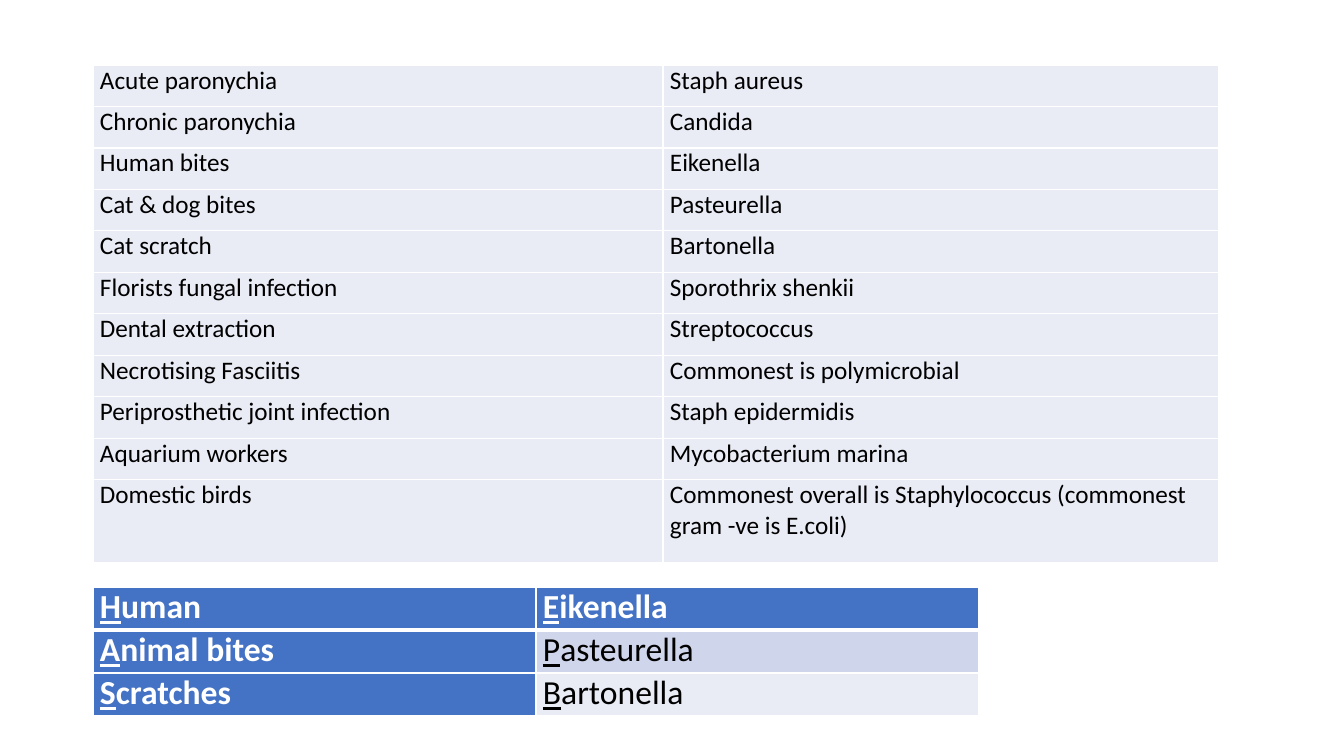
import pptx
import pptx.util
import pptx.dml.color
import pptx.oxml
from pptx.oxml.ns import qn

EMU_PER_PX = 914400 / 100.8
WHITE, BLACK, BLUE = "FFFFFF", "000000", "4472C4"
PALE, MID = "E9EBF5", "CFD5EA"


def color(hex_text):
    return pptx.dml.color.RGBColor.from_string(hex_text)


def px(length):
    return pptx.util.Emu(round(length * EMU_PER_PX))


deck = pptx.Presentation()
deck.slide_width, deck.slide_height = px(1344), px(756)
page = deck.slides.add_slide(deck.slide_layouts[6])

infections = [
    ("Acute paronychia", "Staph aureus"),
    ("Chronic paronychia", "Candida"),
    ("Human bites", "Eikenella"),
    ("Cat & dog bites", "Pasteurella"),
    ("Cat scratch", "Bartonella"),
    ("Florists fungal infection", "Sporothrix shenkii"),
    ("Dental extraction", "Streptococcus"),
    ("Necrotising Fasciitis", "Commonest is polymicrobial"),
    ("Periprosthetic joint infection", "Staph epidermidis"),
    ("Aquarium workers", "Mycobacterium marina"),
    ("Domestic birds", "Commonest overall is Staphylococcus (commonest gram -ve is E.coli)"),
]
mnemonic = [
    ("Human", "Eikenella"),
    ("Animal bites", "Pasteurella"),
    ("Scratches", "Bartonella"),
]

tables = [
    (infections, 65, (570, 556), [px(498) // 12] * 10 + [px(498) // 6], 18, False),
    (mnemonic, 587, (443, 443), [px(43)] * 3, 24, True),
]

for entries, top, widths, heights, size, is_mnemonic in tables:
    frame = page.shapes.add_table(len(entries), 2, px(93), px(top), px(sum(widths)), sum(heights))
    table = frame.table
    table.first_row = is_mnemonic
    table.first_col = is_mnemonic
    table.horz_banding = is_mnemonic
    for column, width in zip(table.columns, widths):
        column.width = px(width)
    for row, height in zip(table.rows, heights):
        row.height = height

    for row_index, entry in enumerate(entries):
        for column_index, words in enumerate(entry):
            cell = table.cell(row_index, column_index)
            cell.margin_left = cell.margin_right = px(7)
            cell.margin_top = cell.margin_bottom = 0
            is_heading = is_mnemonic and (row_index == 0 or column_index == 0)
            is_banded = is_mnemonic and row_index == 1

            para = cell.text_frame.paragraphs[0]
            pieces = [words[:1], words[1:]] if is_mnemonic else [words]
            for piece_index, piece in enumerate(pieces):
                span = para.add_run()
                span.text = piece
                span.font.name = "Calibri"
                span.font.size = pptx.util.Pt(size)
                span.font.bold = is_heading
                span.font.underline = is_mnemonic and piece_index == 0
                span.font.color.rgb = color(WHITE if is_heading else BLACK)

            properties = cell._tc.get_or_add_tcPr()
            for side in ("lnL", "lnR", "lnT", "lnB"):
                below_header = is_mnemonic and (row_index, side) in ((0, "lnB"), (1, "lnT"))
                border = properties.makeelement(qn("a:" + side), {
                    "w": str(pptx.util.Pt(3 if below_header else 1))})
                fill = border.makeelement(qn("a:solidFill"), {})
                fill.append(fill.makeelement(qn("a:srgbClr"), {"val": WHITE}))
                border.append(fill)
                properties.append(border)

            cell.fill.solid()
            cell.fill.fore_color.rgb = color(BLUE if is_heading else MID if is_banded else PALE)

deck.save("out.pptx")
